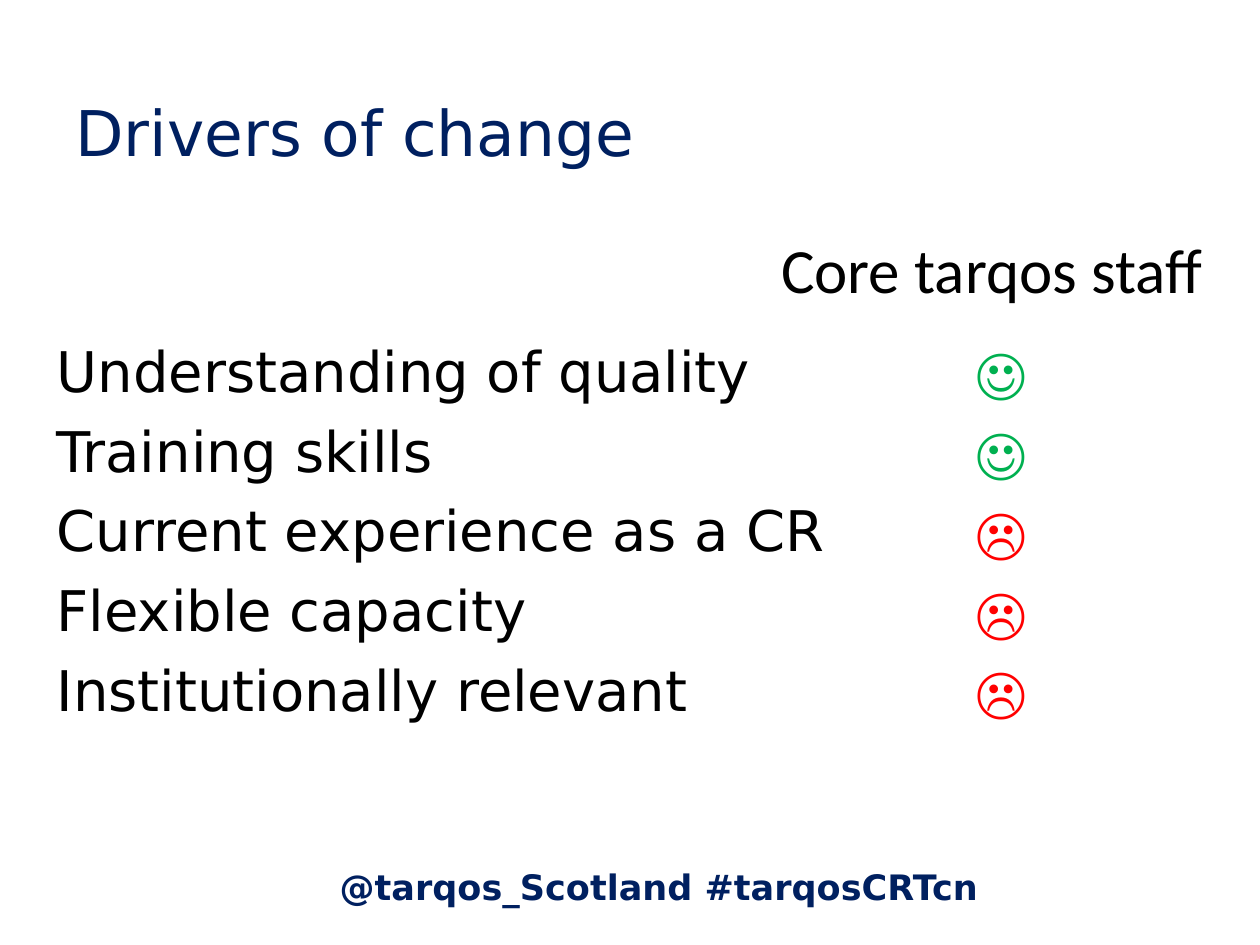
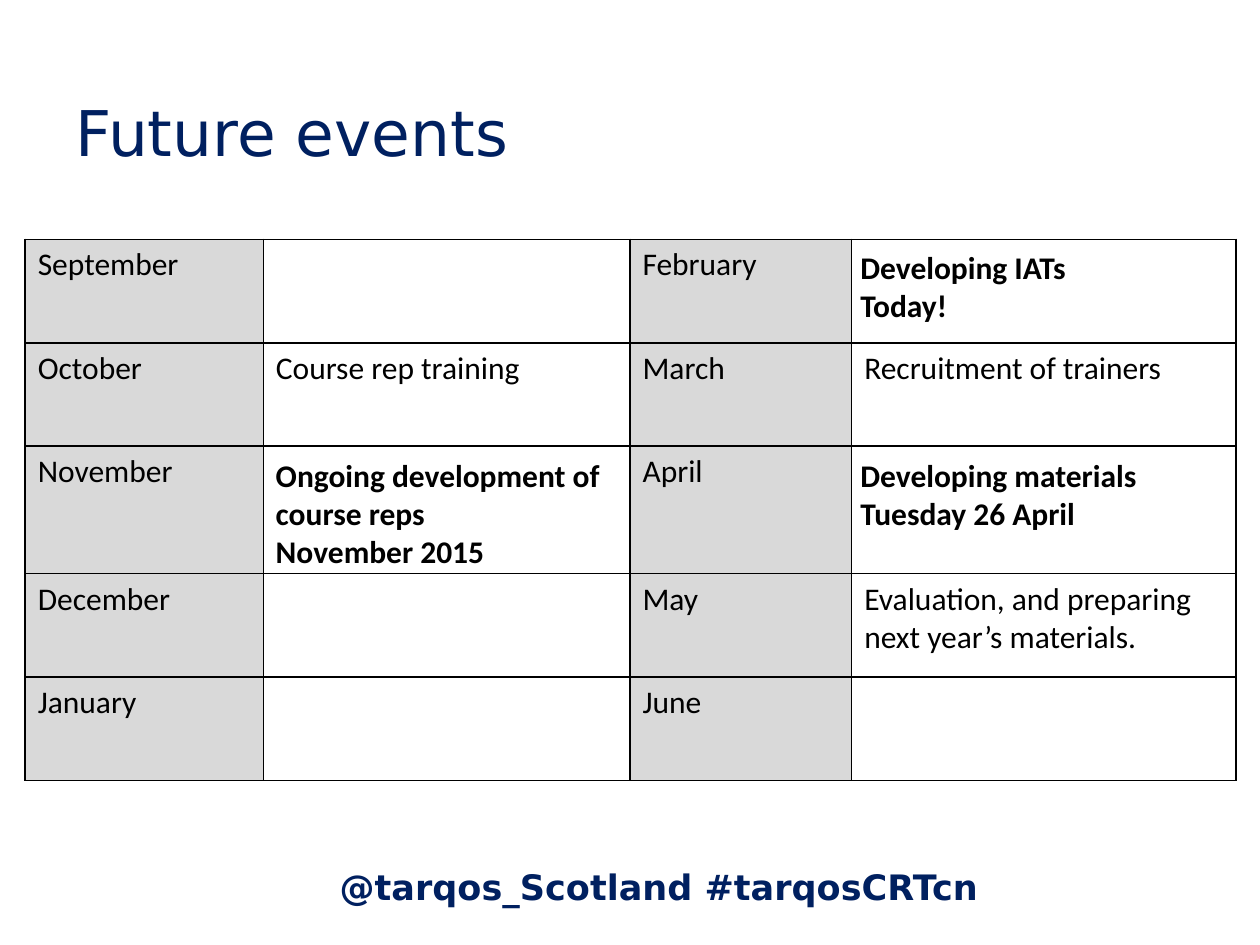
"""Build two slides: a drivers of change checklist and a calendar of future events."""
from lxml.etree import SubElement
from pptx import Presentation
from pptx.dml.color import RGBColor
from pptx.enum.text import MSO_ANCHOR as Anchor, MSO_AUTO_SIZE as AutoSize, PP_ALIGN as Align
from pptx.oxml.ns import qn
from pptx.util import Inches, Pt

COLOURS = {"navy": "002060", "black": "000000", "green": "00B050",
           "red": "FF0000", "grey": "D9D9D9"}
HEADING_FONT, BODY_FONT = "DejaVu Sans", "Calibri"

deck = Presentation()
deck.slide_width, deck.slide_height = Inches(10), Inches(7.5)
COLUMN, ROW = deck.slide_width / 100, deck.slide_height / 100


def write(frame, text, size, font, colour="black", bold=False, align=Align.LEFT):
    """Put text into a frame and format every run."""
    frame.text = text
    for para in frame.paragraphs:
        para.alignment = align
        for span in para.runs:
            span.font.size, span.font.name, span.font.bold = Pt(size), font, bold
            span.font.color.rgb = RGBColor.from_string(COLOURS[colour])


def add_block(page, left, top, widths, heights):
    """Add a text box, or an unstyled table when widths and heights are lists."""
    x, y = int(left * COLUMN), int(top * ROW)
    if not isinstance(widths, list):
        box = page.shapes.add_textbox(x, y, int(widths * COLUMN), int(heights * ROW))
        box.text_frame.word_wrap = True
        return box.text_frame
    table = page.shapes.add_table(len(heights), len(widths), x, y, int(sum(widths) * COLUMN),
                                  int(sum(heights) * ROW)).table
    table.first_row = table.horz_banding = False
    for column, width in zip(table.columns, widths):
        column.width = int(width * COLUMN)
    for row, height in zip(table.rows, heights):
        row.height = int(height * ROW)
    for cell in table.iter_cells():
        cell.fill.background()
    return table


pages = []
for title in ("Drivers of change", "Future events"):
    page = deck.slides.add_slide(deck.slide_layouts[6])
    footer_frame = add_block(page, 22.4, 90.93, 59.8, 5.87)
    write(footer_frame, "@tarqos_Scotland #tarqosCRTcn", 20, HEADING_FONT, "navy", True,
          Align.CENTER)
    title_frame = add_block(page, 5, 4, 72.6, 19.73)
    title_frame.vertical_anchor = Anchor.MIDDLE
    write(title_frame, title, 36, HEADING_FONT, "navy")
    pages.append(page)
drivers_page, events_page = pages

staff_frame = add_block(drivers_page, 54.7, 23.73, 41.7, 9.47)
write(staff_frame, "Core tarqos staff", 36, BODY_FONT, align=Align.RIGHT)

drivers = [("Understanding of quality", True), ("Training skills", True),
           ("Current experience as a CR", False), ("Flexible capacity", False),
           ("Institutionally relevant", False)]
driver_table = add_block(drivers_page, 3.5, 35.33, [72.4, 7.1, 5.5, 7.1], [8.45] * len(drivers))
for index, (driver, met) in enumerate(drivers):
    write(driver_table.cell(index, 0).text_frame, driver, 32, HEADING_FONT)
    face, colour = ("☺", "green") if met else ("☹", "red")
    write(driver_table.cell(index, 1).text_frame, face, 32, BODY_FONT, colour,
          align=Align.CENTER)

calendar = [("September", "", "February", ""),
            ("October", "Course rep training", "March", "Recruitment of trainers"),
            ("November", "", "April", ""),
            ("December", "", "May", "Evaluation, and preparing next year’s materials."),
            ("January", "", "June", "")]
calendar_table = add_block(events_page, 2, 25.33, [18.9, 29.1, 17.6, 30.5],
                           [10.95, 10.95, 13.5, 10.95, 10.95])
for row_index, entries in enumerate(calendar):
    for column_index, entry in enumerate(entries):
        cell = calendar_table.cell(row_index, column_index)
        if entry:
            write(cell.text_frame, entry, 18, BODY_FONT)
        if column_index % 2 == 0:
            cell.fill.solid()
            cell.fill.fore_color.rgb = RGBColor.from_string(COLOURS["grey"])
        properties = cell._tc.get_or_add_tcPr()
        for position, side in enumerate(("lnL", "lnR", "lnT", "lnB")):
            border = SubElement(properties, qn(f"a:{side}"), w=str(Pt(1)))
            SubElement(SubElement(border, qn("a:solidFill")), qn("a:srgbClr"),
                       val=COLOURS["black"])
            properties.insert(position, border)

for left, top, height, event in (
        (20.9, 47.6, 13.47, "Ongoing development of course reps\nNovember 2015"),
        (67.3, 25.6, 9.47, "Developing IATs\nToday!"),
        (67.3, 47.6, 9.47, "Developing materials\nTuesday 26 April")):
    event_frame = add_block(events_page, left, top, 28.3, height)
    event_frame.auto_size = AutoSize.SHAPE_TO_FIT_TEXT
    write(event_frame, event, 18, BODY_FONT, bold=True)

deck.save("out.pptx")
